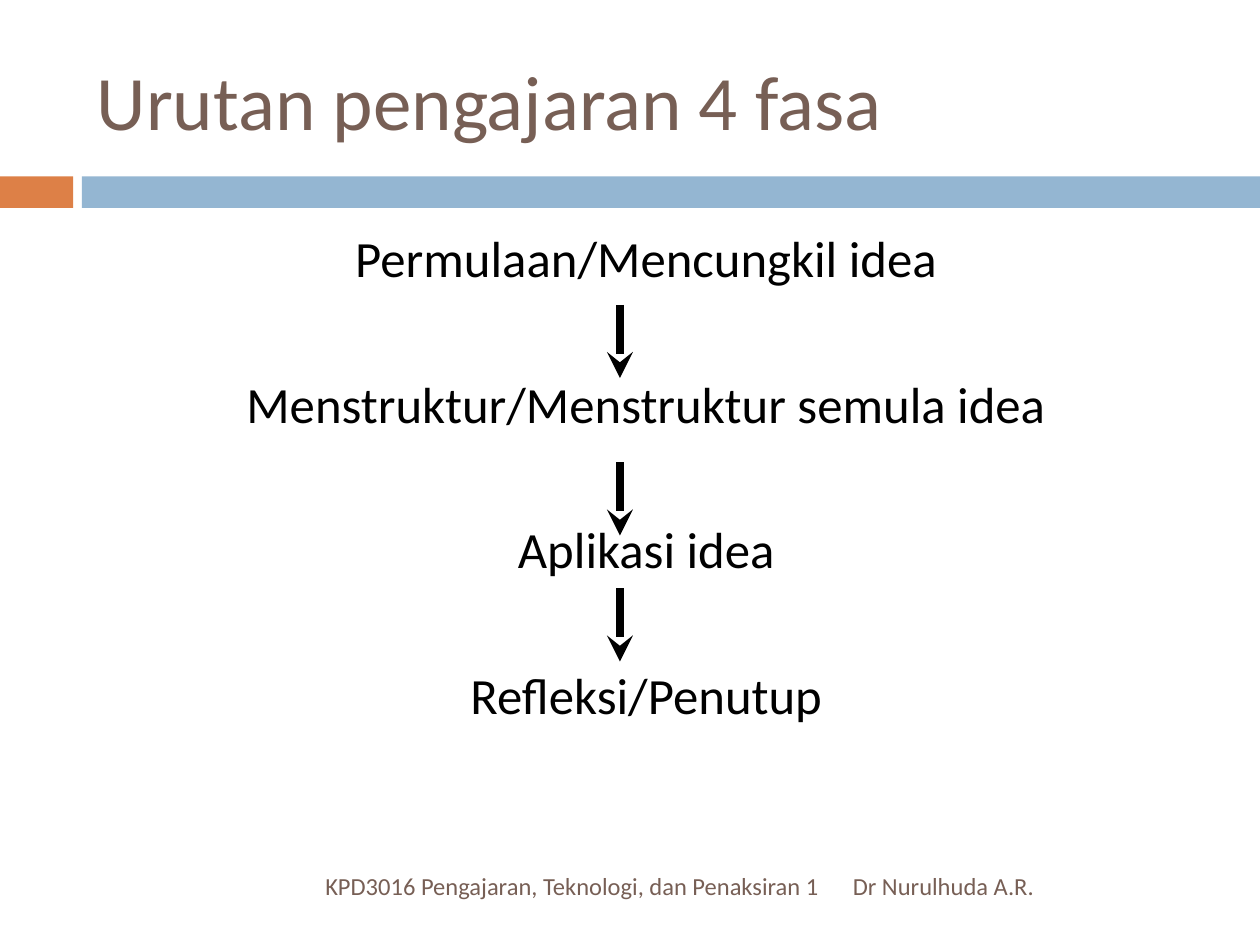
from lxml.etree import SubElement
from pptx import Presentation
from pptx.dml.color import RGBColor
from pptx.enum.shapes import MSO_CONNECTOR, MSO_SHAPE
from pptx.enum.text import MSO_ANCHOR, PP_ALIGN
from pptx.oxml.ns import qn
from pptx.util import Inches, Pt

BROWN, ORANGE, BLUE, BLACK = "775F55", "DD8047", "94B6D2", "000000"
PHASES = [
    "Permulaan/Mencungkil idea",
    "Menstruktur/Menstruktur semula idea",
    "Aplikasi idea",
    "Refleksi/Penutup",
]
ARROW_X, ARROW_LENGTH = 4.92, 0.58
ARROW_TOPS = [2.42, 3.67, 4.67]


def color(value):
    """Return the colour for a hex string."""
    return RGBColor.from_string(value)


def add_bar(page, left, width, fill):
    """Add one block of the band below the title."""
    bar = page.shapes.add_shape(
        MSO_SHAPE.RECTANGLE, Inches(left), Inches(1.4), Inches(width), Inches(0.25)
    )
    bar.shadow.inherit = False
    bar.fill.solid()
    bar.fill.fore_color.rgb = color(fill)
    bar.line.fill.background()


def add_text(page, area, lines, size, ink, anchor=MSO_ANCHOR.MIDDLE, **formats):
    """Add a text box with one paragraph for each line."""
    box = page.shapes.add_textbox(*map(Inches, area))
    frame = box.text_frame
    frame.word_wrap = True
    frame.vertical_anchor = anchor
    frame.text = "\n".join(lines)
    for para in frame.paragraphs:
        for name, value in formats.items():
            setattr(para, name, value)
        for span in para.runs:
            for name, value in {"name": "Calibri", "size": Pt(size)}.items():
                setattr(span.font, name, value)
            span.font.color.rgb = color(ink)


def add_arrow(page, top):
    """Add a downward arrow between two phases."""
    arrow = page.shapes.add_connector(
        MSO_CONNECTOR.STRAIGHT,
        Inches(ARROW_X), Inches(top), Inches(ARROW_X), Inches(top + ARROW_LENGTH),
    )
    arrow.line.width = Pt(5)
    arrow.line.color.rgb = color(BLACK)
    SubElement(arrow.line._get_or_add_ln(), qn("a:tailEnd"), type="stealth")
    SubElement(arrow._element.spPr, qn("a:effectLst"))


def main():
    """Build the slide and save the deck."""
    deck = Presentation()
    deck.slide_width, deck.slide_height = Inches(10), Inches(7.5)
    page = deck.slides.add_slide(deck.slide_layouts[6])
    add_bar(page, 0, 0.58, ORANGE)
    add_bar(page, 0.65, 9.35, BLUE)
    add_text(page, (6.67, 6.83, 2.92, 0.4), ["Dr Nurulhuda A.R."], 14, BROWN)
    add_text(
        page, (0.67, 6.83, 5.93, 0.4),
        ["KPD3016 Pengajaran, Teknologi, dan Penaksiran 1"], 14, BROWN,
        alignment=PP_ALIGN.RIGHT,
    )
    add_text(page, (0.67, 0.25, 8.92, 1.08), ["Urutan pengajaran 4 fasa"], 44, BROWN)
    add_text(
        page, (0.67, 1.75, 8.92, 4.92), PHASES, 29, BLACK, MSO_ANCHOR.TOP,
        alignment=PP_ALIGN.CENTER, space_before=Pt(48.4),
    )
    for top in ARROW_TOPS:
        add_arrow(page, top)
    deck.save("out.pptx")


if __name__ == "__main__":
    main()
